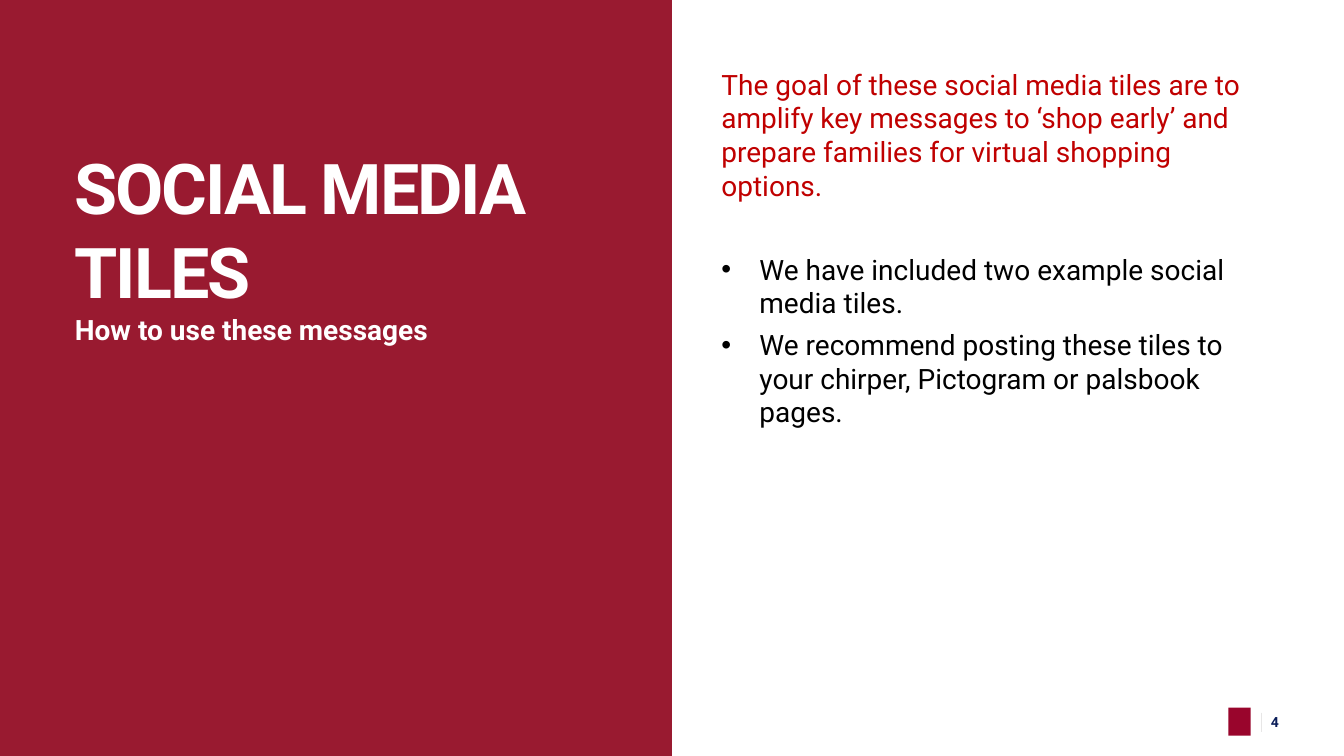
from dataclasses import dataclass

import pptx
import pptx.dml.color
import pptx.enum.shapes
import pptx.enum.text
import pptx.oxml.ns
import pptx.shapes.autoshape
import pptx.slide
import pptx.text.text
import pptx.util
from lxml import etree

Cm = pptx.util.Cm
Pt = pptx.util.Pt
ANCHOR = pptx.enum.text.MSO_ANCHOR
FONT = "Roboto"
MAROON, WHITE, RED, BLACK, NAVY, GREY = "991A30", "FFFFFF", "C00000", "000000", "0B1E59", "E7E6E6"
BADGE = "99052C"
SLIDE_WIDTH, SLIDE_HEIGHT = 33.87, 19.05


@dataclass
class Area:
    left: float
    top: float
    width: float
    height: float


@dataclass
class Line:
    text: str
    size: float
    color: str
    bold: bool = False
    bullet: bool = False
    tracking: int = 0
    after: float = 0


HEADING = [
    Line("SOCIAL MEDIA TILES", 50, WHITE, bold=True, tracking=-150),
    Line("How to use these messages", 20, WHITE, bold=True),
]
GUIDANCE = [
    Line("The goal of these social media tiles are to amplify key messages to ‘shop early’ "
         "and prepare families for virtual shopping options.", 20, RED, after=36),
    Line("We have included two example social media tiles.", 20, BLACK, bullet=True, after=6),
    Line("We recommend posting these tiles to your chirper, Pictogram or palsbook pages.",
         20, BLACK, bullet=True, after=6),
]
PAGE_NUMBER = [Line("4", 10, NAVY, bold=True)]


def rgb(color: str) -> pptx.dml.color.RGBColor:
    return pptx.dml.color.RGBColor.from_string(color)


def place(shape: pptx.shapes.autoshape.Shape, area: Area) -> None:
    shape.left, shape.top = Cm(area.left), Cm(area.top)
    shape.width, shape.height = Cm(area.width), Cm(area.height)


def add_bullet(para: pptx.text.text._Paragraph) -> None:
    properties = para._p.get_or_add_pPr()
    properties.set("marL", str(Cm(0.96)))
    properties.set("indent", str(-Cm(0.96)))
    font = etree.SubElement(properties, pptx.oxml.ns.qn("a:buFont"))
    font.set("typeface", "Arial")
    mark = etree.SubElement(properties, pptx.oxml.ns.qn("a:buChar"))
    mark.set("char", "•")


def write(box: pptx.shapes.autoshape.Shape, lines: list[Line],
          anchor: ANCHOR = ANCHOR.TOP) -> None:
    frame = box.text_frame
    frame.text = "\n".join(line.text for line in lines)
    frame.word_wrap = True
    frame.auto_size = pptx.enum.text.MSO_AUTO_SIZE.NONE
    frame.vertical_anchor = anchor
    for para, line in zip(frame.paragraphs, lines):
        para.alignment = pptx.enum.text.PP_ALIGN.LEFT
        para.space_before = Pt(0)
        para.space_after = Pt(line.after)
        if line.bullet:
            add_bullet(para)
        for span in para.runs:
            span.font.name = FONT
            span.font.size = Pt(line.size)
            span.font.bold = line.bold
            span.font.color.rgb = rgb(line.color)
            if line.tracking:
                span._r.get_or_add_rPr().set("spc", str(line.tracking))


def add_block(page: pptx.slide.Slide, area: Area, color: str) -> pptx.shapes.autoshape.Shape:
    block = page.shapes.add_shape(pptx.enum.shapes.MSO_SHAPE.RECTANGLE, 0, 0, 0, 0)
    place(block, area)
    block.shadow.inherit = False
    block.fill.solid()
    block.fill.fore_color.rgb = rgb(color)
    block.line.fill.background()
    return block


def add_text(page: pptx.slide.Slide, area: Area, lines: list[Line],
             anchor: ANCHOR = ANCHOR.TOP) -> pptx.shapes.autoshape.Shape:
    box = page.shapes.add_textbox(0, 0, 0, 0)
    place(box, area)
    write(box, lines, anchor)
    return box


def add_divider(page: pptx.slide.Slide, x: float, top: float, bottom: float) -> None:
    divider = page.shapes.add_connector(
        pptx.enum.shapes.MSO_CONNECTOR.STRAIGHT, Cm(x), Cm(top), Cm(x), Cm(bottom))
    divider.line.color.rgb = rgb(GREY)
    divider.line.width = Pt(0.5)
    etree.SubElement(divider._element.spPr, pptx.oxml.ns.qn("a:effectLst"))


def main() -> None:
    deck = pptx.Presentation()
    deck.slide_width, deck.slide_height = Cm(SLIDE_WIDTH), Cm(SLIDE_HEIGHT)
    page = deck.slides.add_slide(deck.slide_layouts.get_by_name("Title Only"))

    panel = add_block(page, Area(0, 0, SLIDE_WIDTH / 2, SLIDE_HEIGHT), MAROON)
    title = page.shapes.title
    place(title, Area(1.63, 3.51, 13.46, 5.38))
    write(title, HEADING)
    panel._element.addnext(title._element)

    add_text(page, Area(17.93, 1.57, 14.22, 10.52), GUIDANCE)

    number = add_text(page, Area(32.03, 17.68, 1.3, 1.02), PAGE_NUMBER, ANCHOR.MIDDLE)
    frame = number.text_frame
    frame.margin_left = frame.margin_right = frame.margin_top = frame.margin_bottom = 0
    add_divider(page, 31.78, 17.96, 18.44)
    add_block(page, Area(30.96, 17.83, 0.56, 0.71), BADGE)

    deck.save("out.pptx")


if __name__ == "__main__":
    main()
